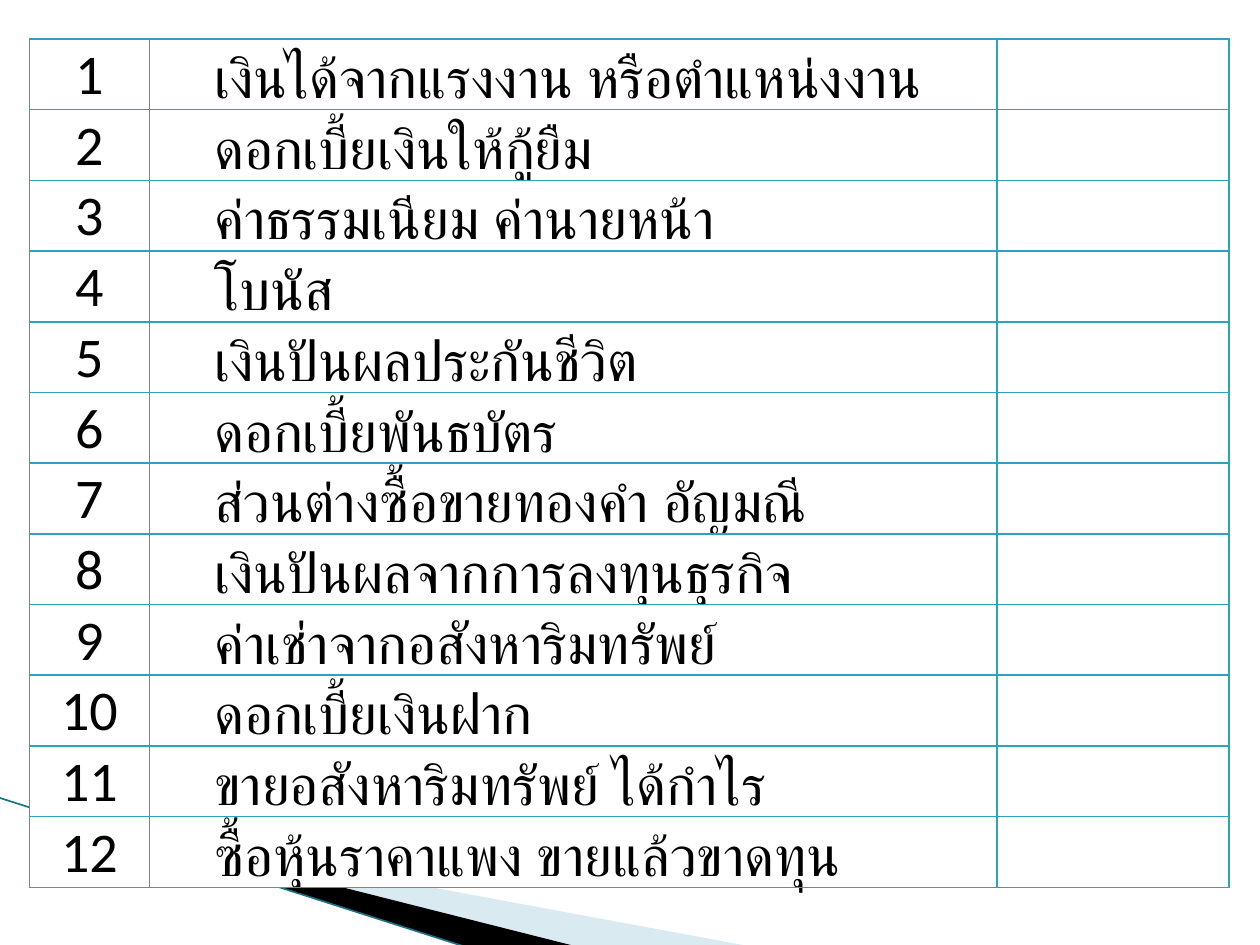
from dataclasses import dataclass

import lxml.etree
import pptx
import pptx.dml.color
import pptx.enum.shapes
import pptx.enum.text
import pptx.oxml
import pptx.oxml.ns
import pptx.util

Inches = pptx.util.Inches
Pt = pptx.util.Pt
qn = pptx.oxml.ns.qn
Align = pptx.enum.text.PP_ALIGN

WIDTH, HEIGHT = 10, 7.5
COLORS = {
    "text": "000000",
    "cell": "FFFFFF",
    "border": "2DA2BF",
    "pale": "A0CBDC",
    "dark": "000000",
    "edge": "1A7284",
}
COLUMN_WIDTHS = (0.95, 6.73, 1.84)
ROW_HEIGHT = 0.52
INCOME_ITEMS = (
    "เงินได้จากแรงงาน หรือตำแหน่งงาน",
    "ดอกเบี้ยเงินให้กู้ยืม",
    "ค่าธรรมเนียม ค่านายหน้า",
    "โบนัส",
    "เงินปันผลประกันชีวิต",
    "ดอกเบี้ยพันธบัตร",
    "ส่วนต่างซื้อขายทองคำ อัญมณี",
    "เงินปันผลจากการลงทุนธุรกิจ",
    "ค่าเช่าจากอสังหาริมทรัพย์",
    "ดอกเบี้ยเงินฝาก",
    "ขายอสังหาริมทรัพย์ ได้กำไร",
    "ซื้อหุ้นราคาแพง ขายแล้วขาดทุน",
)


@dataclass(frozen=True)
class Wedge:
    frame: tuple[float, float, float, float]
    points: tuple[tuple[float, float], ...]
    color: str
    opacity: int = 100


WEDGES = (
    Wedge((0.78, 5.47, 4.16, 1.58),
          ((0.55, 6.51), (5.95, 7.51), (4.56, 7.51), (0.55, 6.5)), "pale", 40),
    Wedge((-0.06, 6.33, 4.16, 0.92),
          ((0.53, 6.49), (4.57, 7.51), (3.72, 7.52), (0.54, 6.5)), "dark"),
)


def rgb(name: str) -> pptx.dml.color.RGBColor:
    return pptx.dml.color.RGBColor.from_string(COLORS[name])


def set_frame(shape, wedge: Wedge) -> None:
    left, top, width, height = map(Inches, wedge.frame)
    shape.left, shape.top, shape.width, shape.height = left, top, width, height
    outline = next(shape._element.iter(qn("a:path")))
    outline.set("w", str(width))
    outline.set("h", str(height))
    for vertex, (x, y) in zip(outline.iter(qn("a:pt")), wedge.points):
        vertex.set("x", str(Inches(x) - left))
        vertex.set("y", str(Inches(y) - top))


def draw_wedge(slide, wedge: Wedge) -> None:
    points = [(Inches(x), Inches(y)) for x, y in wedge.points]
    builder = slide.shapes.build_freeform(*points[0])
    builder.add_line_segments(points[1:], close=True)
    shape = builder.convert_to_shape()
    set_frame(shape, wedge)
    shape.shadow.inherit = False
    shape.fill.solid()
    shape.fill.fore_color.rgb = rgb(wedge.color)
    shape.line.fill.background()
    if wedge.opacity < 100:
        color = shape.fill._xPr.find(qn("a:solidFill"))[0]
        alpha = lxml.etree.SubElement(color, qn("a:alpha"))
        alpha.set("val", str(wedge.opacity * 1000))


def draw_edge(slide) -> None:
    connector = slide.shapes.add_connector(
        pptx.enum.shapes.MSO_CONNECTOR.STRAIGHT,
        Inches(-0.01), Inches(6.33), Inches(3.71), Inches(7.52),
    )
    connector.line.color.rgb = rgb("edge")
    connector.line.width = Pt(0.95)
    lxml.etree.SubElement(connector._element.spPr, qn("a:effectLst"))


def write_text(cell, text: str, *, align=Align.LEFT, level: int = 0,
               indent: float = 0, size: float = 32) -> None:
    paragraph = cell.text_frame.paragraphs[0]
    paragraph.alignment = align
    paragraph.level = level
    properties = paragraph._p.get_or_add_pPr()
    properties.set("marL", str(Inches(indent)))
    properties.set("indent", "0")
    run = paragraph.add_run()
    run.text = text
    run.font.size = Pt(size)
    run.font.name = "Calibri"
    run.font.color.rgb = rgb("text")


def style_cell(cell) -> None:
    cell.margin_left = cell.margin_right = cell.margin_top = Pt(1.25)
    cell.margin_bottom = 0
    cell.vertical_anchor = pptx.enum.text.MSO_ANCHOR.BOTTOM
    properties = cell._tc.get_or_add_tcPr()
    for side in ("lnL", "lnR", "lnT", "lnB"):
        line = lxml.etree.SubElement(properties, qn(f"a:{side}"), w=str(Pt(1)))
        fill = lxml.etree.SubElement(line, qn("a:solidFill"))
        lxml.etree.SubElement(fill, qn("a:srgbClr"), val=COLORS["border"])
    cell.fill.solid()
    cell.fill.fore_color.rgb = rgb("cell")


def draw_income_table(slide) -> None:
    count = len(INCOME_ITEMS)
    table = slide.shapes.add_table(
        count, len(COLUMN_WIDTHS), Pt(16.9), Inches(0.31),
        Inches(sum(COLUMN_WIDTHS)), Inches(ROW_HEIGHT * count),
    ).table
    table.first_row = table.horz_banding = False
    for column, width in zip(table.columns, COLUMN_WIDTHS):
        column.width = Inches(width)
    for row in table.rows:
        row.height = Inches(ROW_HEIGHT)
    for cell in table.iter_cells():
        style_cell(cell)
    for index, item in enumerate(INCOME_ITEMS):
        write_text(table.cell(index, 0), str(index + 1), align=Align.CENTER)
        write_text(table.cell(index, 1), item, level=1, indent=0.5)


def main() -> None:
    presentation = pptx.Presentation()
    presentation.slide_width = Inches(WIDTH)
    presentation.slide_height = Inches(HEIGHT)
    slide = presentation.slides.add_slide(presentation.slide_layouts[6])
    for wedge in WEDGES:
        draw_wedge(slide, wedge)
    draw_edge(slide)
    draw_income_table(slide)
    presentation.save("out.pptx")


if __name__ == "__main__":
    main()
